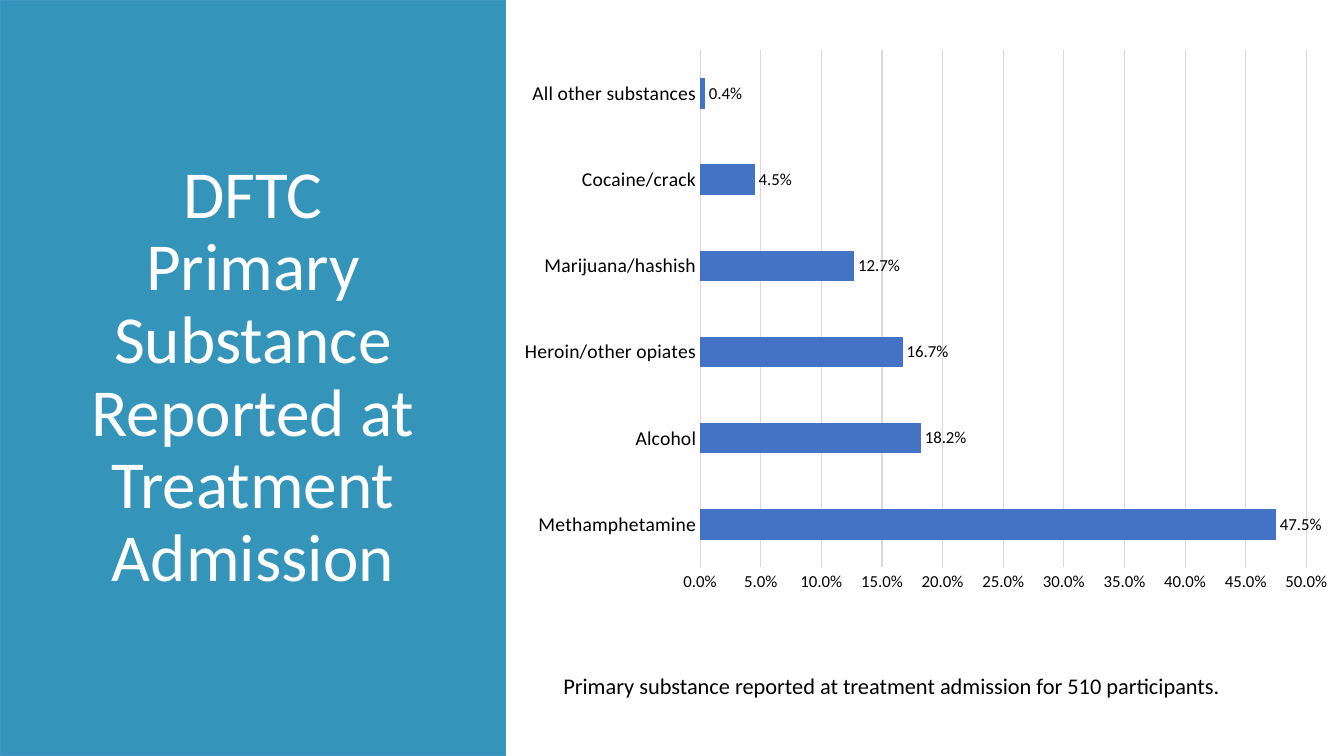
from dataclasses import dataclass

from pptx import Presentation
from pptx.chart.data import CategoryChartData
from pptx.dml.color import RGBColor
from pptx.enum.chart import XL_CHART_TYPE as ChartType
from pptx.enum.chart import XL_LABEL_POSITION as LabelPosition
from pptx.enum.chart import XL_TICK_MARK as TickMark
from pptx.enum.shapes import MSO_SHAPE as Preset
from pptx.enum.text import MSO_ANCHOR as Anchor
from pptx.enum.text import MSO_AUTO_SIZE as AutoSize
from pptx.enum.text import PP_ALIGN as Align
from pptx.util import Pt


@dataclass(frozen=True)
class Theme:
    font: str = "Calibri"
    panel: RGBColor = RGBColor(0x34, 0x94, 0xBA)
    panel_edge: RGBColor = RGBColor(0x40, 0x98, 0xC6)
    bar: RGBColor = RGBColor(0x44, 0x72, 0xC4)
    grid: RGBColor = RGBColor(0xD9, 0xD9, 0xD9)
    light: RGBColor = RGBColor(0xFF, 0xFF, 0xFF)
    dark: RGBColor = RGBColor(0, 0, 0)
    title_size: int = 48
    caption_size: int = 16
    category_size: int = 14
    value_size: int = 12
    chart_size: int = 10


SUBSTANCE_SHARES = {
    "Methamphetamine": 0.475,
    "Alcohol": 0.182,
    "Heroin/other opiates": 0.167,
    "Marijuana/hashish": 0.127,
    "Cocaine/crack": 0.045,
    "All other substances": 0.004,
}
PERCENT = "0.0%"


class SlideBuilder:
    """Draws styled elements on one slide; every box is left, top, width, height in points."""

    def __init__(self, slide, theme):
        self.slide = slide
        self.theme = theme

    def style_font(self, font, size, color):
        font.name = self.theme.font
        font.size = Pt(size)
        font.bold = False
        font.color.rgb = color

    def style_line(self, line, color, width):
        line.color.rgb = color
        line.width = Pt(width)

    def panel(self, box):
        shape = self.slide.shapes.add_shape(Preset.RECTANGLE, *map(Pt, box))
        shape.shadow.inherit = False
        shape.fill.solid()
        shape.fill.fore_color.rgb = self.theme.panel
        self.style_line(shape.line, self.theme.panel_edge, 1)

    def text(self, box, lines, size, color, align=Align.LEFT, anchor=Anchor.TOP,
             spacing=1.0, auto_size=AutoSize.NONE):
        frame = self.slide.shapes.add_textbox(*map(Pt, box)).text_frame
        frame.word_wrap = True
        frame.auto_size = auto_size
        frame.vertical_anchor = anchor
        for index, line in enumerate(lines):
            paragraph = frame.add_paragraph() if index else frame.paragraphs[0]
            paragraph.alignment = align
            paragraph.line_spacing = spacing
            run = paragraph.add_run()
            run.text = line
            self.style_font(run.font, size, color)

    def bar_chart(self, box, shares, maximum, step):
        theme = self.theme
        data = CategoryChartData(number_format=PERCENT)
        data.categories = list(shares)
        data.add_series("Series 1", list(shares.values()))
        chart = self.slide.shapes.add_chart(
            ChartType.BAR_CLUSTERED, *map(Pt, box), data).chart
        chart.has_legend = False
        chart.has_title = False
        self.style_font(chart.font, theme.chart_size, theme.dark)

        plot = chart.plots[0]
        plot.gap_width = 182
        plot.vary_by_categories = False
        series = plot.series[0]
        series.format.fill.solid()
        series.format.fill.fore_color.rgb = theme.bar
        labels = series.data_labels
        labels.show_value = True
        labels.number_format = PERCENT
        labels.number_format_is_linked = False
        labels.position = LabelPosition.OUTSIDE_END
        self.style_font(labels.font, theme.value_size, theme.dark)

        categories, values = chart.category_axis, chart.value_axis
        for axis, size in ((categories, theme.category_size), (values, theme.value_size)):
            axis.major_tick_mark = axis.minor_tick_mark = TickMark.NONE
            self.style_font(axis.tick_labels.font, size, theme.dark)
        self.style_line(categories.format.line, theme.grid, 0.75)
        values.format.line.fill.background()
        values.has_major_gridlines = True
        self.style_line(values.major_gridlines.format.line, theme.grid, 0.75)
        values.minimum_scale, values.maximum_scale = 0, maximum
        values.major_unit = step
        values.tick_labels.number_format = PERCENT
        values.tick_labels.number_format_is_linked = False


def main():
    presentation = Presentation()
    presentation.slide_width, presentation.slide_height = Pt(960), Pt(540)
    theme = Theme()
    builder = SlideBuilder(
        presentation.slides.add_slide(presentation.slide_layouts[6]), theme)

    builder.panel((0, 0, 361, 540))
    builder.text((42.5, 50.4, 276.5, 439.2),
                 ["DFTC", "Primary Substance Reported at Treatment Admission"],
                 theme.title_size, theme.light, Align.CENTER, Anchor.MIDDLE, 0.9)
    builder.text((395.3, 476.6, 555.8, 26.6),
                 ["Primary substance reported at treatment admission for 510 participants."],
                 theme.caption_size, theme.dark, auto_size=AutoSize.SHAPE_TO_FIT_TEXT)
    builder.bar_chart((363, 28, 597, 402.5), SUBSTANCE_SHARES, 0.5, 0.05)
    presentation.save("out.pptx")


if __name__ == "__main__":
    main()
